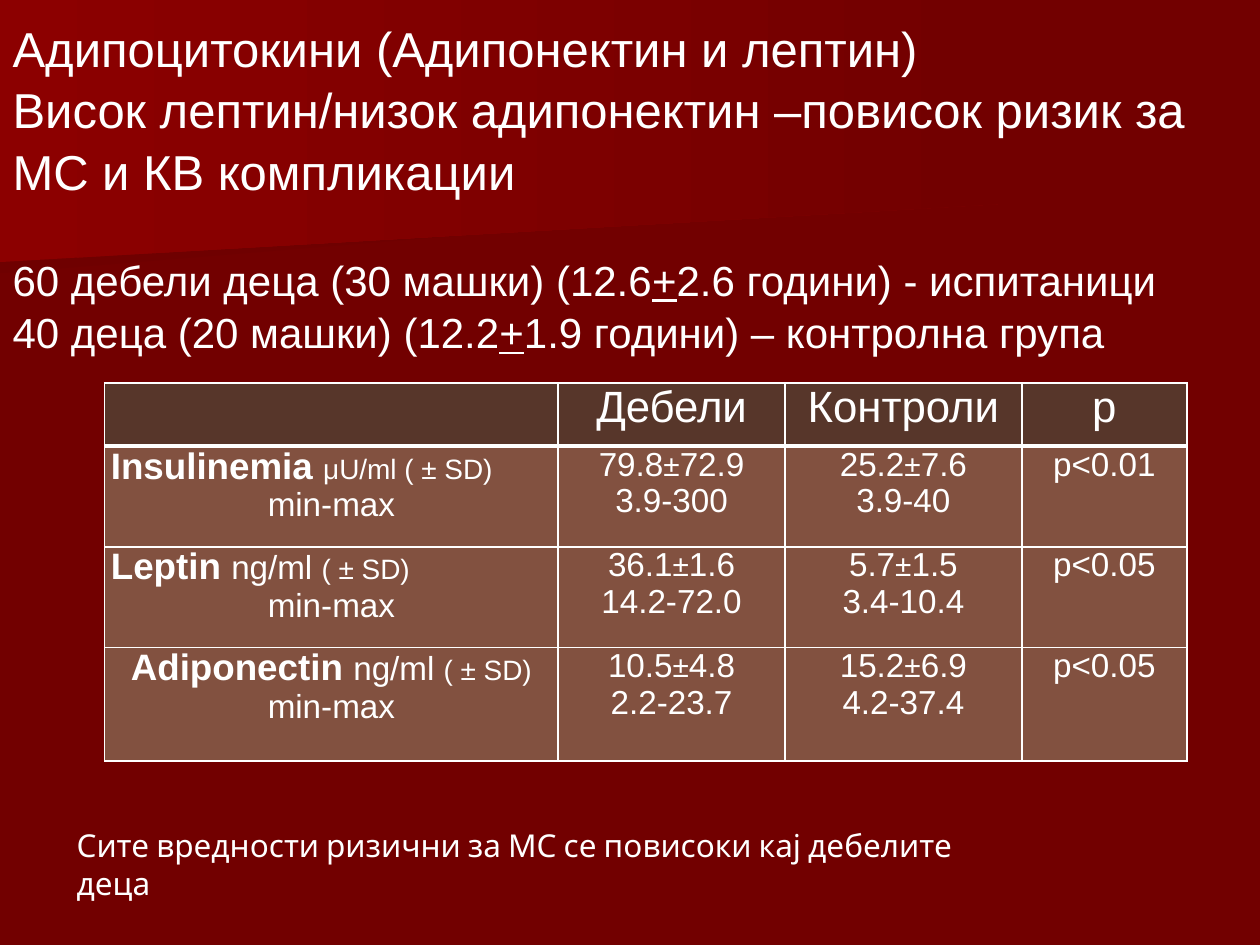
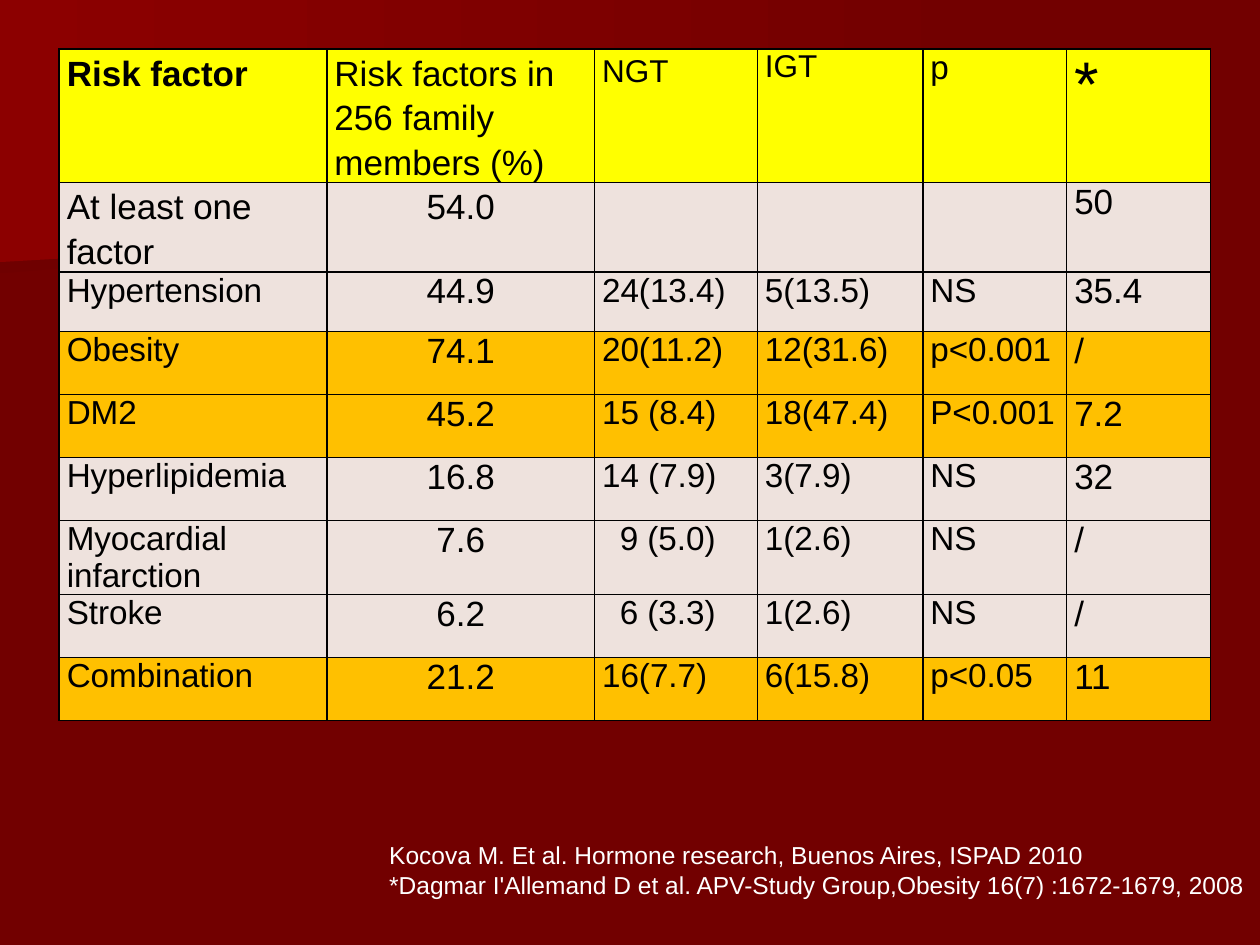
from lxml import etree
from pptx import Presentation
from pptx.dml.color import RGBColor
from pptx.enum.text import MSO_ANCHOR, MSO_AUTO_SIZE, PP_ALIGN
from pptx.oxml.ns import qn
from pptx.util import Emu, Inches, Pt

LEFT, CENTER = PP_ALIGN.LEFT, PP_ALIGN.CENTER
TOP, NO_FIT = MSO_ANCHOR.TOP, MSO_AUTO_SIZE.NONE
SLIDE_W, SLIDE_H = Inches(10), Inches(7.5)

MAROON = RGBColor(0x72, 0x00, 0x00)
DARK_MAROON = RGBColor(0x6F, 0x00, 0x00)
RED = RGBColor(0x8C, 0x00, 0x00)
WHITE = RGBColor(0xFF, 0xFF, 0xFF)
BLACK = RGBColor(0x00, 0x00, 0x00)
DARK_BROWN = RGBColor(0x57, 0x36, 0x2A)
BROWN = RGBColor(0x82, 0x51, 0x40)
YELLOW = RGBColor(0xFF, 0xFF, 0x00)
CREAM = RGBColor(0xEE, 0xE2, 0xDD)
ORANGE = RGBColor(0xFF, 0xC0, 0x00)

BANDS = [
    (DARK_MAROON, [(77.8, 20.4), (0, 28.93), (0, 13.47), (77.9, 13.47), (77.8, 17.07)]),
    (RED, [(79.2, 21.6), (0, 27.73), (0, 0), (79.2, 0)]),
]

GROUP_COLS = (3.6, 1.8, 1.88, 1.31)
GROUP_ROWS = (0.5, 0.8, 0.8, 0.9)
GROUP_HEADS = ("Дебели", "Контроли", "p")
MARKERS = [
    ([("Insulinemia ", 21, True), ("μU/ml ( ± SD)", 16, False)], LEFT,
     ("79.8", "72.9", "3.9-300"), ("25.2", "7.6", "3.9-40"), "p<0.01"),
    ([("Leptin ", 21, True), ("ng/ml ", 19, False), ("( ± SD)", 16, False)], LEFT,
     ("36.1", "1.6", "14.2-72.0"), ("5.7", "1.5", "3.4-10.4"), "p<0.05"),
    ([("Adiponectin ", 21, True), ("ng/ml ", 19, False), ("( ± SD)", 16, False)], CENTER,
     ("10.5", "4.8", "2.2-23.7"), ("15.2", "6.9", "4.2-37.4"), "p<0.05"),
]

RISK_COLS = (2.12, 2.12, 1.29, 1.31, 1.14, 1.14)
RISK_ROWS = (1.06, 0.71, 0.47, 0.5, 0.5, 0.5, 0.59, 0.5, 0.5)
RISK_HEADS = [
    ("Risk factor", 20, 1.14), ("Risk factors in 256 family members (%)", 20, 1.14),
    ("NGT", 18, 1.14), ("IGT", 18, 1), ("p", 19, 1), ("*", 36, 1),
]
RISKS = [
    ("At least one factor", "54.0", "", "", "", "50"),
    ("Hypertension", "44.9", "24(13.4)", "5(13.5)", "NS", "35.4"),
    ("Obesity", "74.1", "20(11.2)", "12(31.6)", "p<0.001", "/"),
    ("DM2", "45.2", "15 (8.4)", "18(47.4)", "P<0.001", "7.2"),
    ("Hyperlipidemia", "16.8", "14 (7.9)", "3(7.9)", "NS", "32"),
    ("Myocardial infarction", "7.6", "9 (5.0)", "1(2.6)", "NS", "/"),
    ("Stroke", "6.2", "6 (3.3)", "1(2.6)", "NS", "/"),
    ("Combination", "21.2", "16(7.7)", "6(15.8)", "p<0.05", "11"),
]
SIGNIFICANT = ("Obesity", "DM2", "Combination")
INDENTED = ("9 (5.0)", "6 (3.3)")


def box(left, top, width, height):
    """Turn percentages of the slide into a left, top, width, height box."""
    return [Emu(round(share * side / 100)) for share, side in
            zip((left, top, width, height), (SLIDE_W, SLIDE_H) * 2)]


def add_run(p, text, size=19, color=WHITE, font="Arial", bold=False, underline=False):
    """Append one formatted run to a paragraph."""
    r = p.add_run()
    r.text = text
    r.font.name, r.font.size = font, Pt(size)
    r.font.bold, r.font.underline = bold, underline
    r.font.color.rgb = color


def add_paragraph(tf, runs, align=LEFT, spacing=1, after=0, **fmt):
    """Write runs, given as text or (text, format) pairs, into the next paragraph."""
    p = tf.paragraphs[-1]
    if p.runs:
        p = tf.add_paragraph()
    p.alignment, p.line_spacing = align, spacing
    p.space_before, p.space_after = Pt(0), Pt(after)
    for text, extra in [(runs, {})] if isinstance(runs, str) else runs:
        add_run(p, text, **{**fmt, **extra})
    return p


def prepare_frame(sp, area):
    """Place a text shape and return its wrapped, top-anchored frame."""
    sp.left, sp.top, sp.width, sp.height = area
    tf = sp.text_frame
    tf.word_wrap, tf.auto_size, tf.vertical_anchor = True, NO_FIT, TOP
    return tf


def add_note(s, area, lines, **fmt):
    """Add a text box with one paragraph per line."""
    tf = prepare_frame(s.shapes.add_textbox(*area), area)
    for line in lines:
        add_paragraph(tf, line, **fmt)


def add_band(s, master, depth, color, points):
    """Draw a gradient band and move it to the back of the master."""
    corners = [tuple(box(x, y, 0, 0)[:2]) for x, y in points]
    builder = s.shapes.build_freeform(*corners[0], scale=1.0)
    builder.add_line_segments(corners[1:], close=True)
    sp = builder.convert_to_shape()
    sp.shadow.inherit = False
    sp.line.fill.background()
    sp.fill.gradient()
    sp.fill.gradient_angle = 0
    for stop, shade in zip(sp.fill.gradient_stops, (color, MAROON)):
        stop.color.rgb = shade
    master.shapes.element.insert(2 + depth, sp.element)


def style_cell(cell, fill, border, inset, top=1, bottom=1):
    """Set borders, fill and insets of a table cell."""
    tc_pr = cell._tc.get_or_add_tcPr()
    for side, width in zip("LRTB", (1, 1, top, bottom)):
        ln = etree.SubElement(tc_pr, qn(f"a:ln{side}"), w=str(Pt(width)))
        solid = etree.SubElement(ln, qn("a:solidFill"))
        etree.SubElement(solid, qn("a:srgbClr"), val=str(border))
    cell.fill.solid()
    cell.fill.fore_color.rgb = fill
    cell.margin_left = cell.margin_right = Inches(inset)
    cell.margin_top = cell.margin_bottom = 0
    cell.vertical_anchor = TOP


def add_grid(s, area, cols, rows):
    """Add a plain table whose columns and rows share the area by weight."""
    table = s.shapes.add_table(len(rows), len(cols), *area).table
    table.first_row = table.horz_banding = False
    for col, weight in zip(table.columns, cols):
        col.width = Emu(round(area[2] * weight / sum(cols)))
    for row, weight in zip(table.rows, rows):
        row.height = Emu(round(area[3] * weight / sum(rows)))
    return table


def add_group_table(s):
    """Add the table comparing obese children with controls."""
    table = add_grid(s, box(8.3, 40.53, 85.9, 40), GROUP_COLS, GROUP_ROWS)
    for r in range(len(GROUP_ROWS)):
        for c in range(len(GROUP_COLS)):
            style_cell(table.cell(r, c), BROWN if r else DARK_BROWN, WHITE, 0.05,
                       top=3 if r == 1 else 1, bottom=1 if r else 3)
    for c, head in enumerate(GROUP_HEADS, 1):
        add_paragraph(table.cell(0, c).text_frame, head, CENTER, size=25)
    for r, (name, align, obese, controls, p_value) in enumerate(MARKERS, 1):
        tf = table.cell(r, 0).text_frame
        add_paragraph(tf, [(t, {"size": size, "bold": bold}) for t, size, bold in name], align)
        add_paragraph(tf, "min-max", CENTER)
        for c, (mean, deviation, span) in enumerate((obese, controls), 1):
            tf = table.cell(r, c).text_frame
            add_paragraph(tf, [(mean, {}), ("±", {"size": 17}), (deviation, {})], CENTER)
            add_paragraph(tf, span, CENTER)
        add_paragraph(table.cell(r, 3).text_frame, p_value, CENTER)


def add_risk_table(s):
    """Add the table of risk factors in family members."""
    table = add_grid(s, box(4.7, 5.2, 91.4, 71.07), RISK_COLS, RISK_ROWS)
    for c, (head, size, spacing) in enumerate(RISK_HEADS):
        cell = table.cell(0, c)
        style_cell(cell, YELLOW, BLACK, 0.06)
        add_paragraph(cell.text_frame, head, spacing=spacing, after=14 if c < 2 else 0,
                      size=size, color=BLACK, bold=c == 0)
    for r, values in enumerate(RISKS, 1):
        fill = ORANGE if values[0] in SIGNIFICANT else CREAM
        for c, value in enumerate(values):
            cell = table.cell(r, c)
            style_cell(cell, fill, BLACK, 0.06)
            if value in INDENTED:
                cell.margin_left = Inches(0.2)
            if value:
                opening = r == 1 and c < 2
                add_paragraph(cell.text_frame, value, CENTER if c == 1 else LEFT,
                              spacing=1.14 if opening else 1, after=14 if c < 2 else 0,
                              size=20 if opening or c in (1, 5) else 19, color=BLACK)


def add_heading(s):
    """Fill the title and the list of study groups."""
    tf = prepare_frame(s.shapes.title, box(0, 1.07, 96.7, 24.9))
    for line in ("Адипоцитокини (Адипонектин и лептин)",
                 "Висок лептин/низок адипонектин –повисок ризик за МС и КВ компликации"):
        add_paragraph(tf, line, spacing=1.04, size=28)
    tf = prepare_frame(s.placeholders[1], box(0, 26, 96.7, 12.3))
    for start, end in (("60 дебели деца (30 машки) (12.6", "2.6 години) - испитаници"),
                       ("40 деца (20 машки) (12.2", "1.9 години) – контролна група")):
        p = add_paragraph(tf, [(start, {}), ("+", {"underline": True}), (end, {})],
                          spacing=1.04, size=24)
        p_pr = p._p.get_or_add_pPr()
        p_pr.set("marL", "0")
        p_pr.set("indent", "0")
        etree.SubElement(p_pr, qn("a:buNone"))


def main():
    """Build both slides and save the presentation."""
    prs = Presentation()
    prs.slide_width, prs.slide_height = SLIDE_W, SLIDE_H
    master = prs.slide_master
    master.background.fill.solid()
    master.background.fill.fore_color.rgb = MAROON

    s = prs.slides.add_slide(prs.slide_layouts[1])
    for depth, (color, points) in enumerate(BANDS):
        add_band(s, master, depth, color, points)
    add_heading(s)
    add_group_table(s)
    add_note(s, box(5.1, 86.8, 74.9, 9.3),
             ["Сите вредности ризични за МС се повисоки кај дебелите деца"],
             size=18, font="Cabin")

    s = prs.slides.add_slide(prs.slide_layouts[6])
    add_risk_table(s)
    add_note(s, box(29.9, 88.27, 70.1, 11.73),
             ["Kocova M. Et al. Hormone research, Buenos Aires, ISPAD 2010",
              "*Dagmar I'Allemand D et al. APV-Study Group,Obesity 16(7) :1672-1679, 2008"],
             size=14)
    prs.save("out.pptx")


if __name__ == "__main__":
    main()
